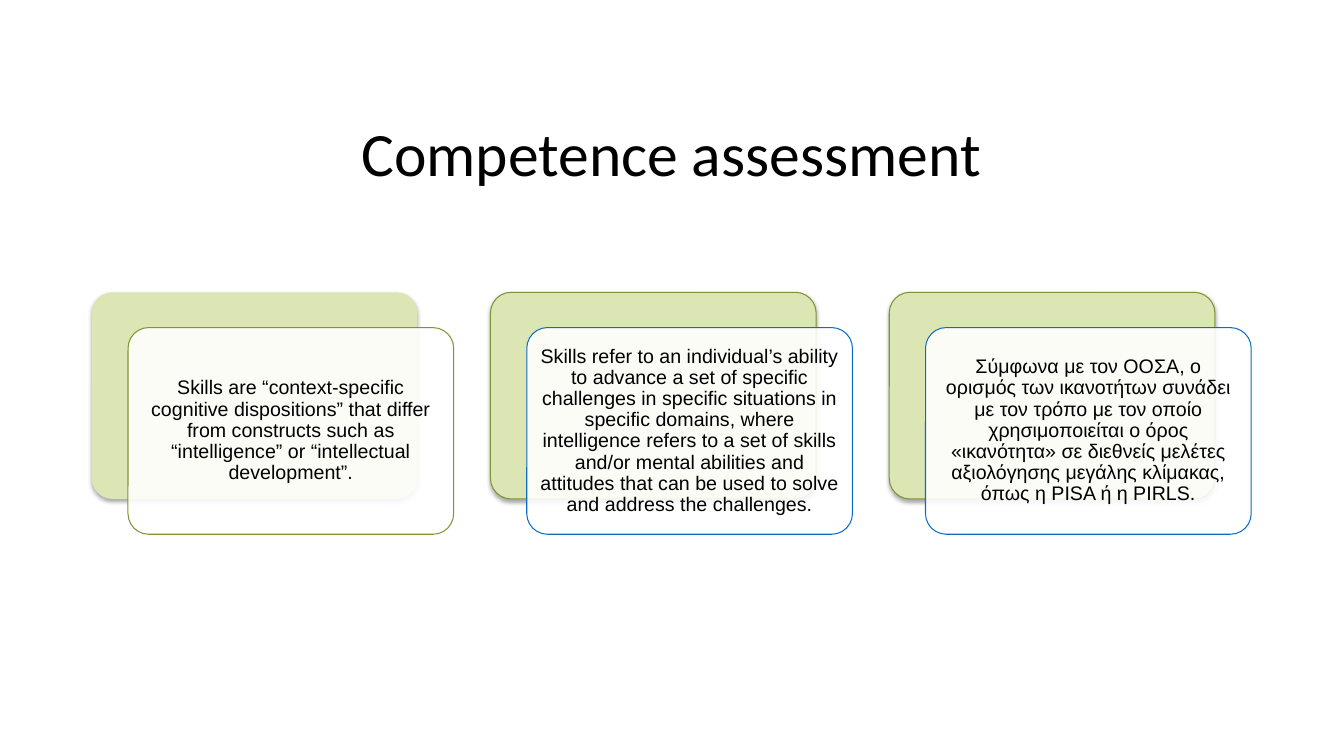
from lxml import etree
from pptx import Presentation
from pptx.dml.color import RGBColor
from pptx.enum import shapes, text
from pptx.oxml import ns
from pptx.util import Inches, Pt

BLACK = RGBColor(0x00, 0x00, 0x00)
WHITE = RGBColor(0xFF, 0xFF, 0xFF)
PALE_GREEN = RGBColor(0xDB, 0xE6, 0xB4)
OLIVE = RGBColor(0x7E, 0x95, 0x32)
BLUE = RGBColor(0x0D, 0x6D, 0xC5)

CARD_WIDTH, CARD_HEIGHT = 3.23, 2.05
CARD_SHIFT_X, CARD_SHIFT_Y = 0.36, 0.35
COLUMN_STEP = 3.955

# Statement, outline of the back card, outline of the front card
STATEMENTS = [
    ("Skills are “context-specific cognitive dispositions” that differ from "
     "constructs such as “intelligence” or “intellectual development”.",
     None, OLIVE),
    ("Skills refer to an individual’s ability to advance a set of specific "
     "challenges in specific situations in specific domains, where intelligence "
     "refers to a set of skills and/or mental abilities and attitudes that can "
     "be used to solve and address the challenges.",
     OLIVE, BLUE),
    ("Σύμφωνα με τον ΟΟΣΑ, ο ορισμός των ικανοτήτων συνάδει με τον τρόπο με τον "
     "οποίο χρησιμοποιείται ο όρος «ικανότητα» σε διεθνείς μελέτες αξιολόγησης "
     "μεγάλης κλίμακας, όπως η PISA ή η PIRLS.",
     OLIVE, BLUE),
]


def write_text(shape, wording, *, size, font, margin_x, margin_y):
    """Fill a shape with one centred paragraph."""
    frame = shape.text_frame
    frame.word_wrap = True
    frame.vertical_anchor = text.MSO_ANCHOR.MIDDLE
    frame.margin_left = frame.margin_right = Inches(margin_x)
    frame.margin_top = frame.margin_bottom = Inches(margin_y)
    paragraph = frame.paragraphs[0]
    paragraph.alignment = text.PP_ALIGN.CENTER
    paragraph.line_spacing = 0.9
    run = paragraph.add_run()
    run.text = wording
    run.font.size = Pt(size)
    run.font.name = font
    run.font.color.rgb = BLACK


def set_opacity(shape, percent):
    color = shape.fill._xPr.find(".//" + ns.qn("a:srgbClr"))
    etree.SubElement(color, ns.qn("a:alpha"), val=str(percent * 1000))


def add_soft_shadow(shape):
    """Put a short shadow straight below the shape."""
    effects = shape._element.spPr.find(ns.qn("a:effectLst"))
    shadow = etree.SubElement(
        effects, ns.qn("a:outerShdw"), blurRad=str(Pt(3.1)), dist=str(Pt(1.8)),
        dir=str(90 * 60000), rotWithShape="0")
    color = etree.SubElement(shadow, ns.qn("a:srgbClr"), val=str(BLACK))
    etree.SubElement(color, ns.qn("a:alpha"), val="35000")


def add_card(slide, left, top, fill, outline):
    card = slide.shapes.add_shape(
        shapes.MSO_SHAPE.ROUNDED_RECTANGLE, Inches(left), Inches(top),
        Inches(CARD_WIDTH), Inches(CARD_HEIGHT))
    card.adjustments[0] = 0.1
    card.shadow.inherit = False
    card.fill.solid()
    card.fill.fore_color.rgb = fill
    if outline is None:
        card.line.fill.background()
    else:
        card.line.color.rgb = outline
        card.line.width = Pt(0.75)
    return card


def add_title(slide, left, top, width, height):
    title = slide.shapes.add_textbox(
        Inches(left), Inches(top), Inches(width), Inches(height))
    write_text(title, "Competence assessment", size=44, font="Calibri",
               margin_x=0.1, margin_y=0.05)


def add_statement(slide, left, top, wording, back_outline, front_outline):
    """Place a back card and, shifted down and right, a front card with text."""
    back = add_card(slide, left, top, PALE_GREEN, back_outline)
    add_soft_shadow(back)
    front = add_card(slide, left + CARD_SHIFT_X, top + CARD_SHIFT_Y,
                     WHITE, front_outline)
    set_opacity(front, 89)
    write_text(front, wording, size=14, font="Arial",
               margin_x=0.06, margin_y=0.06)


def main():
    presentation = Presentation()
    presentation.slide_width = Inches(13.33)
    presentation.slide_height = Inches(7.5)
    slide = presentation.slides.add_slide(presentation.slide_layouts[6])
    add_title(slide, 0.91, 0.91, 11.5, 1.29)
    for column, statement in enumerate(STATEMENTS):
        add_statement(slide, 0.91 + column * COLUMN_STEP, 2.9, *statement)
    presentation.save("out.pptx")


if __name__ == "__main__":
    main()
